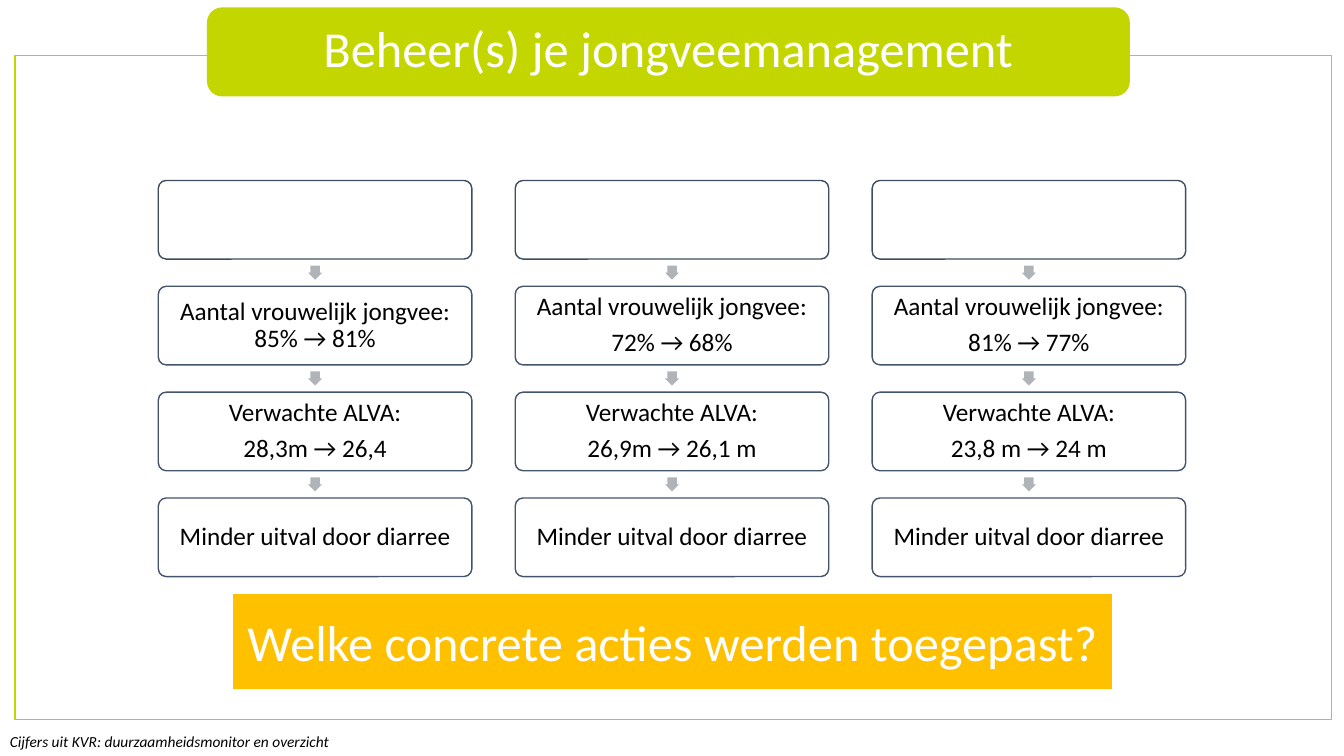
from dataclasses import dataclass

from pptx import Presentation
from pptx.dml.color import RGBColor
from pptx.enum.shapes import MSO_CONNECTOR as Connector, MSO_SHAPE as Preset
from pptx.enum.text import MSO_ANCHOR as Anchor, PP_ALIGN as Align
from pptx.oxml.ns import qn
from pptx.util import Inches, Pt


@dataclass
class Theme:
    font: str = "Calibri"
    green: str = "C3D600"
    frame: str = "B0B0B0"
    header: str = "3E4C60"
    step: str = "44546A"
    arrow: str = "B0B4B9"
    amber: str = "FFC000"
    white: str = "FFFFFF"
    black: str = "000000"
    heading_size: int = 36
    step_size: int = 18
    source_size: int = 11


theme = Theme()


def add_box(preset, left, top, width, height, fill=None, line=None, weight=1):
    """Add a preset shape, measured in inches, without shadow."""
    box = slide.shapes.add_shape(
        preset, Inches(left), Inches(top), Inches(width), Inches(height))
    box.shadow.inherit = False
    if fill:
        box.fill.solid()
        box.fill.fore_color.rgb = RGBColor.from_string(fill)
    else:
        box.fill.background()
    if line:
        box.line.color.rgb = RGBColor.from_string(line)
        box.line.width = Pt(weight)
    else:
        box.line.fill.background()
    return box


def write(shape, lines, size, color, align=Align.CENTER, spacing=0.9, inset=0.03):
    """Fill a shape with one paragraph per line, centred vertically."""
    frame = shape.text_frame
    frame.text = "\n".join(lines)
    frame.word_wrap = True
    frame.vertical_anchor = Anchor.MIDDLE
    frame.margin_left = frame.margin_right = Inches(inset)
    frame.margin_top = frame.margin_bottom = Inches(0.03)
    for paragraph in frame.paragraphs:
        paragraph.alignment = align
        paragraph.line_spacing = spacing
        paragraph.space_before = Pt(0)
        paragraph.space_after = Pt(0.35 * size if len(lines) > 1 else 0)
        paragraph.font.name = theme.font
        paragraph.font.size = Pt(size)
        paragraph.font.color.rgb = RGBColor.from_string(color)


presentation = Presentation()
presentation.slide_width = Inches(13.33)
presentation.slide_height = Inches(7.5)
slide = presentation.slides.add_slide(presentation.slide_layouts[5])

# Frame with a green left edge
frame_left, frame_top, frame_width, frame_height = 0.15, 0.55, 13.06, 6.59
add_box(Preset.RECTANGLE, frame_left, frame_top, frame_width, frame_height,
        line=theme.frame, weight=0.5)
edge = slide.shapes.add_connector(
    Connector.STRAIGHT, Inches(frame_left), Inches(frame_top),
    Inches(frame_left), Inches(frame_top + frame_height))
edge.line.color.rgb = RGBColor.from_string(theme.green)
edge.line.width = Pt(1)
properties = edge.element.spPr
properties.append(properties.makeelement(qn("a:effectLst"), {}))

# Title on its green bar
title_bar = add_box(Preset.ROUNDED_RECTANGLE, 2.06, 0.08, 9.14, 0.87,
                    theme.green, theme.green)
title = slide.shapes.title
title.left, title.top = Inches(2.1), Inches(0.12)
title.width, title.height = Inches(9.06), Inches(0.78)
write(title, ["Beheer(s) je jongveemanagement"], theme.heading_size, theme.white,
      inset=0.35)
title_bar.element.addnext(title.element)

# Three columns of four steps; the header step is empty
columns = [
    [[], ["Aantal vrouwelijk jongvee: 85% → 81%"],
     ["Verwachte ALVA:", "28,3m → 26,4"], ["Minder uitval door diarree"]],
    [[], ["Aantal vrouwelijk jongvee:", "72% → 68%"],
     ["Verwachte ALVA:", "26,9m → 26,1 m"], ["Minder uitval door diarree"]],
    [[], ["Aantal vrouwelijk jongvee:", "81% → 77%"],
     ["Verwachte ALVA:", "23,8 m → 24 m"], ["Minder uitval door diarree"]],
]
grid_left, grid_top = 1.57, 1.79
column_pitch, row_pitch = 3.54, 1.05
step_width, step_height, arrow_size = 3.11, 0.78, 0.14

for column, steps in enumerate(columns):
    left = grid_left + column * column_pitch
    for row, lines in enumerate(steps):
        top = grid_top + row * row_pitch
        if row > 0:
            arrow = add_box(
                Preset.RIGHT_ARROW,
                left + (step_width - arrow_size) / 2,
                top - (row_pitch - step_height + arrow_size) / 2,
                arrow_size, arrow_size, theme.arrow)
            arrow.rotation = 90
            arrow.adjustments[0] = 0.67
        step = add_box(Preset.ROUNDED_RECTANGLE, left, top, step_width, step_height,
                       theme.white, theme.step if lines else theme.header)
        step.adjustments[0] = 0.1
        if lines:
            write(step, lines, theme.step_size, theme.black)

# Closing question and source
question = add_box(Preset.FLOWCHART_PROCESS, 2.31, 5.89, 8.72, 0.95, theme.amber)
write(question, ["Welke concrete acties werden toegepast?"], theme.heading_size,
      theme.white, spacing=1, inset=0.1)

source = slide.shapes.add_textbox(Inches(0), Inches(7.21), Inches(5.43), Inches(0.29))
write(source, ["Cijfers uit KVR: duurzaamheidsmonitor en overzicht"],
      theme.source_size, theme.black, Align.LEFT, spacing=1, inset=0.1)
source.text_frame.paragraphs[0].font.italic = True

presentation.save("out.pptx")
